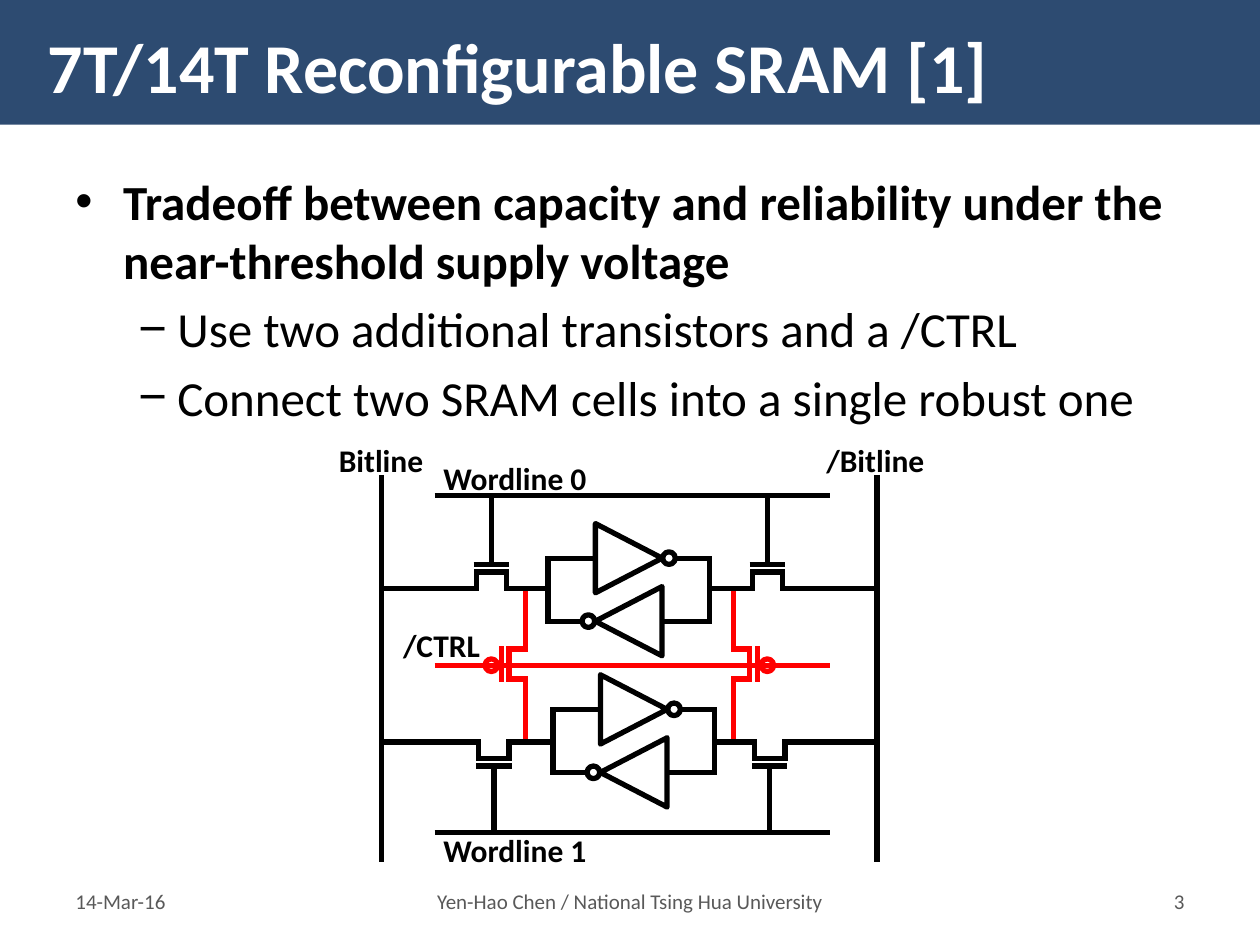
from itertools import pairwise

from lxml import etree
from pptx import Presentation
from pptx.dml.color import RGBColor
from pptx.enum.shapes import MSO_CONNECTOR, MSO_SHAPE
from pptx.enum.text import MSO_ANCHOR, PP_ALIGN
from pptx.oxml.ns import qn
from pptx.util import Inches, Pt

STRAIGHT = MSO_CONNECTOR.STRAIGHT
RECTANGLE, OVAL, TRIANGLE = MSO_SHAPE.RECTANGLE, MSO_SHAPE.OVAL, MSO_SHAPE.ISOSCELES_TRIANGLE
TOP, MIDDLE = MSO_ANCHOR.TOP, MSO_ANCHOR.MIDDLE
LEFT, CENTER, RIGHT = PP_ALIGN.LEFT, PP_ALIGN.CENTER, PP_ALIGN.RIGHT

FONT = "Calibri"
NAVY, WHITE, BLACK, RED, GRAY = "2D4B71", "FFFFFF", "000000", "FF0000", "595959"
STROKE = Pt(3)

# Transistor proportions, measured from the wire it sits on
HALF_CHANNEL, CHANNEL, GATE = 0.12, 0.13, 0.19
BUBBLE = 0.1


def color(hex_value):
    return RGBColor.from_string(hex_value)


def add_text(shapes, box, lines, size, ink, bold=False, align=LEFT, anchor=TOP, wrap=True):
    frame = shapes.add_textbox(*map(Inches, box)).text_frame
    frame.text = "\n".join(lines)
    frame.word_wrap = wrap
    frame.vertical_anchor = anchor
    for paragraph in frame.paragraphs:
        paragraph.alignment = align
        font = paragraph.runs[0].font
        font.name, font.size, font.bold = FONT, Pt(size), bold
        font.color.rgb = color(ink)
    return frame


def add_label(shapes, left, top, width, text):
    add_text(shapes, (left, top, width, 0.4), [text], 18, BLACK, bold=True, wrap=False)


def add_wire(shapes, ink, *points, cap="sq"):
    """Join the points with straight segments; square caps close the corners."""
    for start, end in pairwise(points):
        wire = shapes.add_connector(STRAIGHT, *map(Inches, (*start, *end)))
        wire.line.color.rgb = color(ink)
        wire.line.width = STROKE
        wire.line._get_or_add_ln().set("cap", cap)
        etree.SubElement(wire._element.spPr, qn("a:effectLst"))


def add_outline(shapes, preset, ink, center_x, center_y, width, height, rotation=0):
    outline = shapes.add_shape(preset, Inches(center_x - width / 2), Inches(center_y - height / 2),
                               Inches(width), Inches(height))
    outline.rotation = rotation
    outline.shadow.inherit = False
    outline.fill.background()
    outline.line.color.rgb = color(ink)
    outline.line.width = STROKE


def add_title(shapes, left, top, width, height):
    band = shapes.add_shape(RECTANGLE, *map(Inches, (left, top, width, height)))
    band.shadow.inherit = False
    band.fill.solid()
    band.fill.fore_color.rgb = color(NAVY)
    band.line.fill.background()
    add_text(shapes, (left + 0.28, top + 0.1, width - 0.55, height - 0.15),
             ["7T/14T Reconfigurable SRAM [1]"], 40, WHITE, bold=True, anchor=MIDDLE)


def add_body(shapes, left, top, width, height):
    points = [
        ("Tradeoff between capacity and reliability under the near-threshold supply voltage", 0),
        ("Use two additional transistors and a /CTRL", 1),
        ("Connect two SRAM cells into a single robust one", 1),
    ]
    bullet_styles = [("•", 0.38, 0.38), ("−", 0.81, 0.31)]
    frame = add_text(shapes, (left, top, width, height), [text for text, _ in points], 28, BLACK)
    for paragraph, (_, level) in zip(frame.paragraphs, points):
        mark, margin, hanging = bullet_styles[level]
        paragraph.level = level
        paragraph.space_before = Pt(5.6)
        paragraph.runs[0].font.bold = level == 0
        properties = paragraph._p.get_or_add_pPr()
        properties.set("marL", str(Inches(margin)))
        properties.set("indent", str(-Inches(hanging)))
        etree.SubElement(properties, qn("a:buFont"), typeface="Arial")
        etree.SubElement(properties, qn("a:buChar"), char=mark)


def add_footer(shapes, left, top, width, height):
    side = 1.19
    parts = [
        (left, side, "14-Mar-16", LEFT),
        (left + 1.35, width - 2.7, "Yen-Hao Chen / National Tsing Hua University", CENTER),
        (left + width - side, side, "3", RIGHT),
    ]
    for x, part_width, text, align in parts:
        add_text(shapes, (x, top, part_width, height), [text], 12, GRAY,
                 align=align, anchor=MIDDLE)


def add_control(shapes, left, right, top, bottom):
    """Two pass transistors between the cells, facing outwards, and /CTRL."""
    middle = (top + bottom) / 2 - 0.01
    upper, lower = middle - HALF_CHANNEL, middle + HALF_CHANNEL
    for x, outward in ((left, -1), (right, 1)):
        channel_x, gate_x = x + outward * CHANNEL, x + outward * GATE
        add_wire(shapes, RED, (x, top), (x, upper), (channel_x, upper),
                 (channel_x, lower), (x, lower), (x, bottom))
        add_wire(shapes, RED, (gate_x, middle - 0.14), (gate_x, middle + 0.14), cap="flat")
        add_outline(shapes, OVAL, RED, x + outward * 0.27, middle + 0.01, BUBBLE, BUBBLE)
    add_wire(shapes, RED, (left - 0.72, middle + 0.01), (right + 0.77, middle + 0.01), cap="flat")
    add_label(shapes, left - 1.07, middle - 0.35, 0.82, "/CTRL")


def add_inverter_loop(shapes, left, upper, lower):
    """Cross-coupled inverters; the lower one mirrors the upper one."""
    middle, half = left + 0.64, 0.64
    for y, facing, rotation in ((upper, 1, 90), (lower, -1, 270)):
        add_outline(shapes, TRIANGLE, BLACK, middle, y, 0.55, 0.53, rotation)
        add_outline(shapes, OVAL, BLACK, middle + facing * 0.32, y, BUBBLE, BUBBLE)
        add_wire(shapes, BLACK, (middle - facing * half, y), (middle - facing * 0.27, y))
        add_wire(shapes, BLACK, (middle + facing * 0.37, y), (middle + facing * half, y))
    for x in (left, left + 2 * half):
        add_wire(shapes, BLACK, (x, upper), (x, lower))


def add_cell(shapes, left, right, wire_y, wordline_y, shift):
    """One cell between the bitlines; its access transistors face the wordline."""
    facing = 1 if wordline_y > wire_y else -1
    loop_left = left + 1.32 + shift
    loop_right = loop_left + 1.28
    upper, lower = sorted((wire_y + facing * 0.24, wire_y - facing * 0.26))
    add_inverter_loop(shapes, loop_left, upper, lower)

    channel_y, gate_y = wire_y + facing * CHANNEL, wire_y + facing * GATE
    gates = (left + 0.87 + shift / 2, left + 3.06 + shift / 2)
    for gate_x, start, end in zip(gates, (left, loop_right), (loop_left, right)):
        near, far = gate_x - HALF_CHANNEL, gate_x + HALF_CHANNEL
        add_wire(shapes, BLACK, (start, wire_y), (near, wire_y), (near, channel_y),
                 (far, channel_y), (far, wire_y), (end, wire_y))
        add_wire(shapes, BLACK, (gate_x - 0.14, gate_y), (gate_x + 0.14, gate_y), cap="flat")
        add_wire(shapes, BLACK, (gate_x, gate_y), (gate_x, wordline_y))
    add_wire(shapes, BLACK, (left + 0.42, wordline_y), (left + 3.56, wordline_y), cap="flat")


def add_circuit(shapes, left, top, width, height):
    right, bottom = left + width, top + height
    upper_wire, lower_wire = top + 0.9, top + 2.12

    # Bitlines
    for x in (right, left):
        add_wire(shapes, BLACK, (x, top), (x, bottom), cap="flat")

    # Control transistors, under the cell wires
    add_control(shapes.add_group_shape().shapes, left + 1.14, left + 2.79, upper_wire, lower_wire)

    # Memory cells with their wordlines
    cells = [
        (upper_wire, top + 0.16, 0, top - 0.18, "Wordline 0"),
        (lower_wire, top + 2.84, 0.04, top + 2.78, "Wordline 1"),
    ]
    for wire_y, wordline_y, shift, label_y, label in cells:
        cell = shapes.add_group_shape().shapes
        add_cell(cell, left, right, wire_y, wordline_y, shift)
        add_label(cell, left + 0.39, label_y, 1.35, label)

    # Bitline labels
    add_label(shapes, left - 0.44, top - 0.32, 0.88, "Bitline")
    add_label(shapes, right - 0.5, top - 0.32, 0.99, "/Bitline")


def main():
    deck = Presentation()
    deck.slide_width, deck.slide_height = Inches(10), Inches(7.5)
    shapes = deck.slides.add_slide(deck.slide_layouts[6]).shapes
    add_title(shapes, 0, 0, 10, 0.99)
    add_body(shapes, 0.5, 1.31, 9, 5.42)
    add_footer(shapes, 0.5, 6.95, 9, 0.4)
    add_circuit(shapes, 3.03, 3.77, 3.93, 3.07)
    deck.save("out.pptx")


if __name__ == "__main__":
    main()
